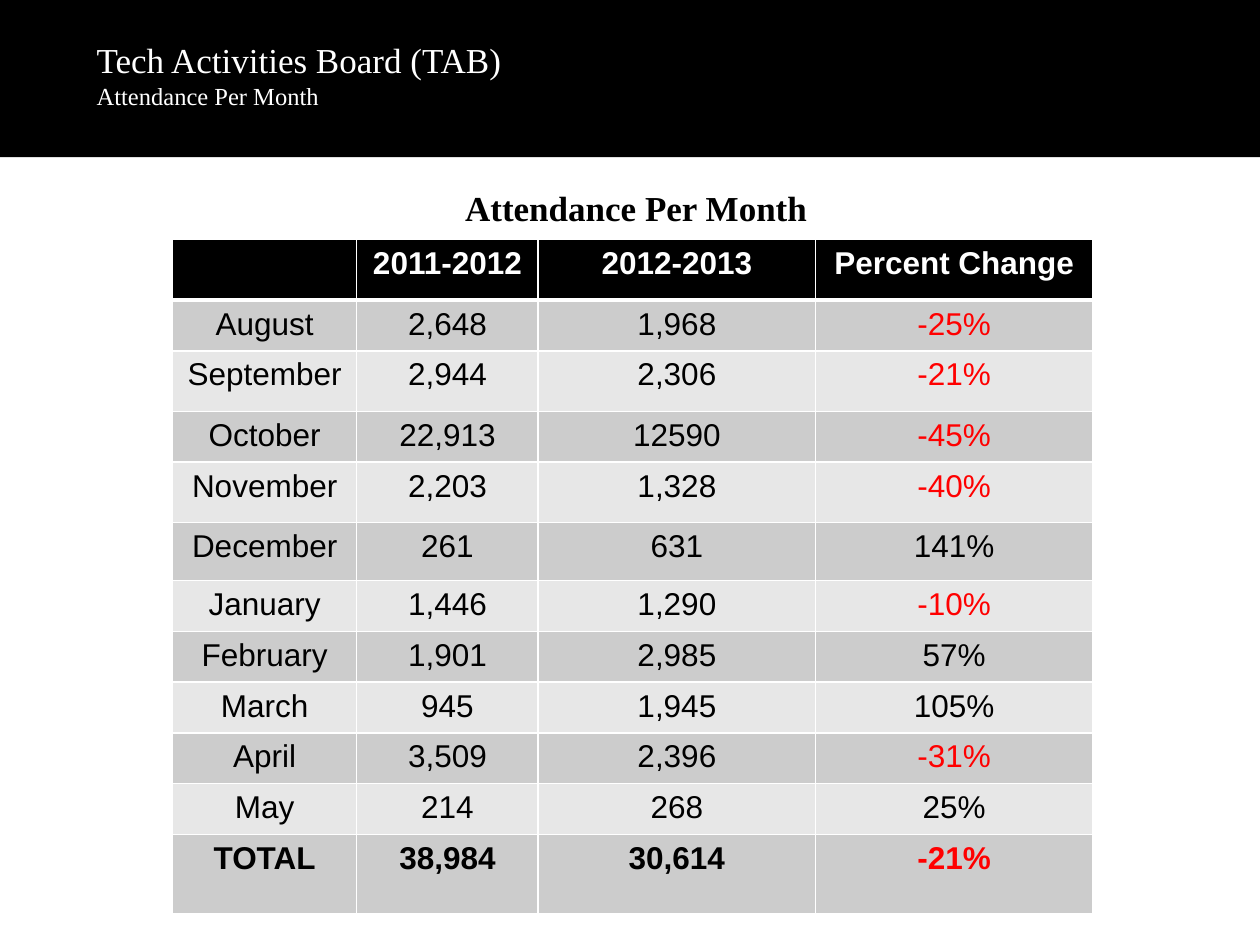
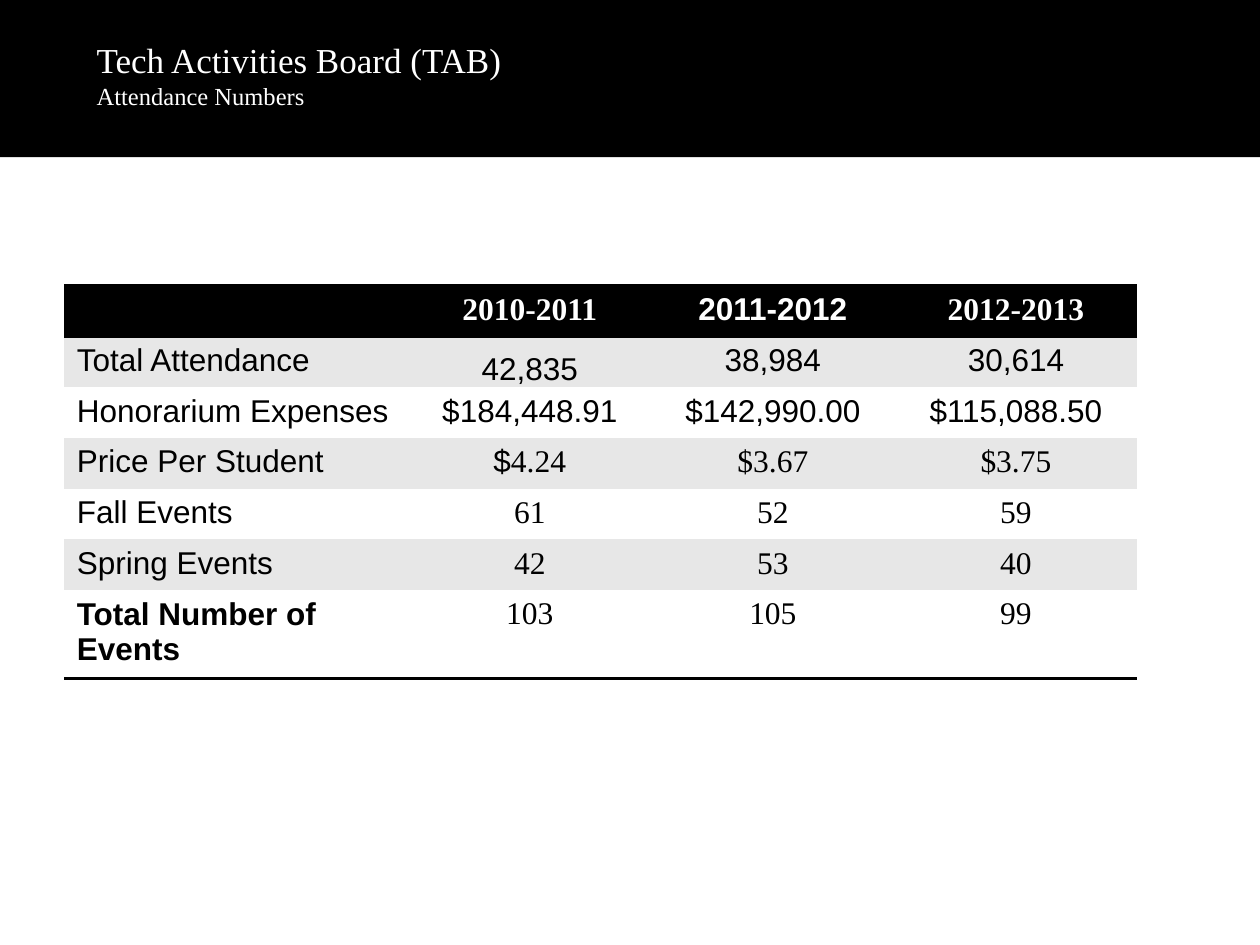
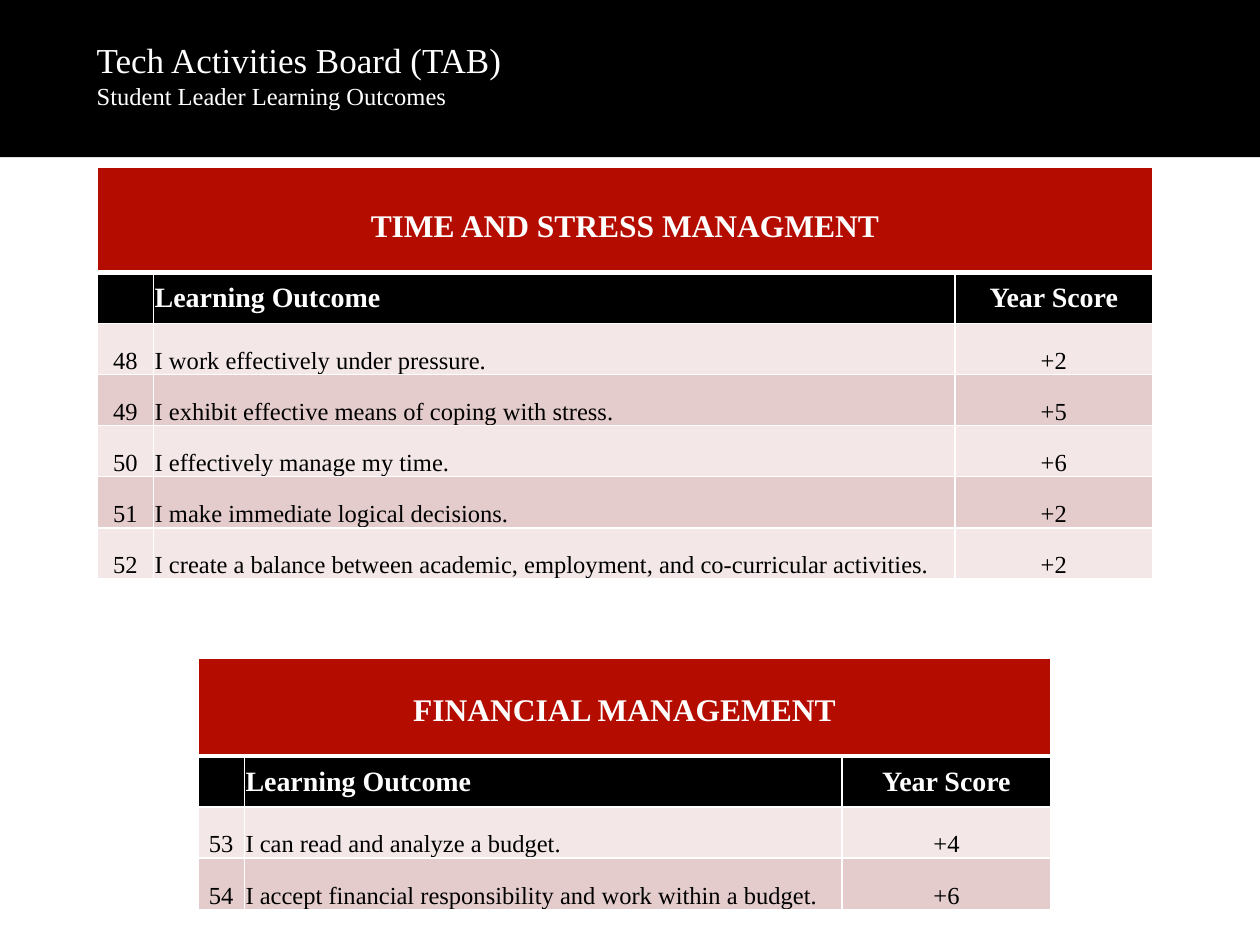
from dataclasses import dataclass, replace
from typing import Callable, Optional

import pptx
import pptx.dml.color
import pptx.enum.shapes
import pptx.enum.text
import pptx.oxml.ns
import pptx.slide
import pptx.table
import pptx.text.text
import pptx.util
from lxml import etree

Cm = pptx.util.Cm
Align = pptx.enum.text.PP_ALIGN
Anchor = pptx.enum.text.MSO_ANCHOR

BLACK, WHITE, RED, BRICK = "000000", "FFFFFF", "FF0000", "B50C00"
GREY, PALE = "CCCCCC", "E7E7E7"
ROSE, BLUSH = "E5CCCC", "F3E7E7"
SANS, SERIF = "Arial", "Times New Roman"

# Cell margins in cm: left, top, right, bottom
ROOMY = (0.25, 0.13, 0.25, 0.13)
TIGHT = (0.02, 0.02, 0.02, 0)
LIFTED = (0.02, 0.02, 0.02, 0.57)

Edge = Optional[tuple[str, float]]
THIN, THICK, DARK = (WHITE, 1), (WHITE, 3), (BLACK, 2)


@dataclass(frozen=True)
class Style:
    fill: str
    font: str = SANS
    size: int = 18
    ink: str = BLACK
    bold: bool = False
    align: Align = Align.CENTER
    anchor: Anchor = Anchor.TOP
    pad: tuple[float, ...] = ROOMY
    side: Edge = THIN
    top: Edge = THIN
    base: Edge = THIN


@dataclass(frozen=True)
class Grid:
    left: float
    top: float
    widths: list[float]
    heights: list[float]
    rows: list[list[str]]
    style: Callable[[int, int, str], Style]


def tint(code: str) -> pptx.dml.color.RGBColor:
    return pptx.dml.color.RGBColor.from_string(code)


def set_font(para: pptx.text.text._Paragraph, font: str, size: int, ink: str,
             bold: bool = False) -> None:
    for run in para.runs:
        run.font.name = font
        run.font.size = pptx.util.Pt(size)
        run.font.bold = bold
        run.font.color.rgb = tint(ink)


def add_edge(cell: pptx.table._Cell, tag: str, edge: Edge) -> None:
    """Append one border; call before the fill is set, in the order L, R, T, B."""
    qn = pptx.oxml.ns.qn
    line = etree.SubElement(cell._tc.get_or_add_tcPr(), qn(f"a:{tag}"))
    if edge is None:
        etree.SubElement(line, qn("a:noFill"))
        return
    code, width = edge
    line.set("w", str(pptx.util.Pt(width)))
    fill = etree.SubElement(line, qn("a:solidFill"))
    etree.SubElement(fill, qn("a:srgbClr")).set("val", code)


def draw_cell(cell: pptx.table._Cell, text: str, style: Style) -> None:
    edges = (style.side, style.side, style.top, style.base)
    for tag, edge in zip(("lnL", "lnR", "lnT", "lnB"), edges):
        add_edge(cell, tag, edge)
    cell.fill.solid()
    cell.fill.fore_color.rgb = tint(style.fill)
    (cell.margin_left, cell.margin_top,
     cell.margin_right, cell.margin_bottom) = map(Cm, style.pad)
    cell.vertical_anchor = style.anchor
    if text:
        cell.text_frame.text = text
        para = cell.text_frame.paragraphs[0]
        para.alignment = style.align
        set_font(para, style.font, style.size, style.ink, style.bold)


def draw_grid(slide: pptx.slide.Slide, grid: Grid) -> pptx.table.Table:
    frame = slide.shapes.add_table(
        len(grid.heights), len(grid.widths), Cm(grid.left), Cm(grid.top),
        Cm(sum(grid.widths)), Cm(sum(grid.heights)))
    table = frame.table
    table.first_row = table.horz_banding = False
    for col, width in zip(table.columns, grid.widths):
        col.width = Cm(width)
    for row, height in zip(table.rows, grid.heights):
        row.height = Cm(height)
    for r, texts in enumerate(grid.rows):
        for c, text in enumerate(texts):
            draw_cell(table.cell(r, c), text, grid.style(r, c, text))
    return table


def add_text(slide: pptx.slide.Slide, box: tuple[float, ...],
             text: str) -> pptx.text.text.TextFrame:
    frame = slide.shapes.add_textbox(*map(Cm, box)).text_frame
    frame.word_wrap = True
    frame.text = text
    return frame


def add_page(deck: pptx.presentation.Presentation, topic: str) -> pptx.slide.Slide:
    """Add a slide with the black band and its two-line title."""
    slide = deck.slides.add_slide(deck.slide_layouts[6])
    band = slide.shapes.add_shape(
        pptx.enum.shapes.MSO_SHAPE.RECTANGLE, 0, 0, deck.slide_width, Cm(3.17))
    band.shadow.inherit = False
    band.fill.solid()
    band.fill.fore_color.rgb = tint(BLACK)
    band.line.fill.background()
    title = add_text(slide, (1.7, -0.08, 20.88, 3.17),
                     f"Tech Activities Board (TAB)\n{topic}")
    title.vertical_anchor = Anchor.MIDDLE
    for para, size in zip(title.paragraphs, (20, 14)):
        set_font(para, SERIF, size, WHITE)
    return slide


def month_style(r: int, c: int, text: str) -> Style:
    if r == 0:
        return Style(BLACK, ink=WHITE, bold=True, base=THICK)
    return Style(GREY if r % 2 else PALE, bold=r == len(MONTHS) - 1,
                 ink=RED if text.startswith("-") else BLACK,
                 top=THICK if r == 1 else THIN)


def year_style(r: int, c: int, text: str) -> Style:
    if r == 0:
        return Style(BLACK, SANS if c == 2 else SERIF, ink=WHITE, bold=True,
                     side=None, top=DARK, base=DARK)
    last = r == len(YEARS) - 1
    style = Style(PALE if r % 2 else WHITE, SERIF if c and r > 2 else SANS,
                  bold=last and c == 0, align=Align.CENTER if c else Align.LEFT,
                  side=None, top=DARK if r == 1 else None,
                  base=DARK if last else None)
    if (r, c) == (1, 1):
        style = replace(style, anchor=Anchor.BOTTOM, pad=TIGHT)
    return style


def score_style(r: int, c: int, text: str) -> Style:
    if r == 0:
        return Style(BRICK, SERIF, ink=WHITE, bold=True, anchor=Anchor.BOTTOM,
                     pad=LIFTED, base=THICK)
    align = Align.LEFT if c == 1 else Align.CENTER
    if r == 1:
        return Style(BLACK, SERIF, 16, WHITE, True, align, Anchor.MIDDLE, TIGHT,
                     top=THICK)
    return Style(ROSE if r % 2 else BLUSH, SERIF, 14, align=align,
                 anchor=Anchor.BOTTOM, pad=TIGHT)


def draw_score(slide: pptx.slide.Slide, left: float, top: float,
               widths: list[float], head: float, name: str, first: int,
               scores: list[tuple[str, str]]) -> None:
    """Draw a banner, a heading row and outcomes numbered from first."""
    rows = [[name, "", ""], ["", "Learning Outcome", "Year Score"]]
    rows += [[str(n), *pair] for n, pair in enumerate(scores, first)]
    heights = [head] + [1.03] * (len(rows) - 1)
    table = draw_grid(slide, Grid(left, top, widths, heights, rows, score_style))
    table.cell(0, 0).merge(table.cell(0, 2))


MONTHS = [
    ["", "2011-2012", "2012-2013", "Percent Change"],
    ["August", "2,648", "1,968", "-25%"],
    ["September", "2,944", "2,306", "-21%"],
    ["October", "22,913", "12590", "-45%"],
    ["November", "2,203", "1,328", "-40%"],
    ["December", "261", "631", "141%"],
    ["January", "1,446", "1,290", "-10%"],
    ["February", "1,901", "2,985", "57%"],
    ["March", "945", "1,945", "105%"],
    ["April", "3,509", "2,396", "-31%"],
    ["May", "214", "268", "25%"],
    ["TOTAL", "38,984", "30,614", "-21%"],
]
YEARS = [
    ["", "2010-2011", "2011-2012", "2012-2013"],
    ["Total Attendance", "42,835", "38,984", "30,614"],
    ["Honorarium Expenses", "$184,448.91", "$142,990.00", "$115,088.50"],
    ["Price Per Student", "$4.24", "$3.67", "$3.75"],
    ["Fall Events", "61", "52", "59"],
    ["Spring Events", "42", "53", "40"],
    ["Total Number of Events", "103", "105", "99"],
]
STRESS = [
    ("I work effectively under pressure.", "+2"),
    ("I exhibit effective means of coping with stress.", "+5"),
    ("I effectively manage my time.", "+6"),
    ("I make immediate logical decisions.", "+2"),
    ("I create a balance between academic, employment, and "
     "co-curricular activities.", "+2"),
]
MONEY = [
    ("I can read and analyze a budget.", "+4"),
    ("I accept financial responsibility and work within a budget.", "+6"),
]


def main() -> None:
    deck = pptx.Presentation()
    deck.slide_width, deck.slide_height = Cm(25.4), Cm(19.05)

    slide = add_page(deck, "Attendance Per Month")
    heights = [1.22, 1.02, 1.22, 1.02, 1.22, 1.17] + [1.02] * 5 + [1.6]
    draw_grid(slide, Grid(3.48, 4.83, [3.71, 3.66, 5.59, 5.59], heights,
                          MONTHS, month_style))
    para = add_text(slide, (7.11, 3.63, 11.43, 1.12),
                    "Attendance Per Month").paragraphs[0]
    para.alignment = Align.CENTER
    set_font(para, SERIF, 20, BLACK, True)

    slide = add_page(deck, "Attendance Numbers")
    table = draw_grid(slide, Grid(1.3, 5.76, [6.93] + [4.9] * 3,
                                  [1.02] * 6 + [1.57], YEARS, year_style))
    price = table.cell(3, 1).text_frame.paragraphs[0]
    price.runs[0].text = "$"
    price.add_run().text = "4.24"
    set_font(price, SERIF, 18, BLACK)
    price.runs[0].font.name = SANS

    slide = add_page(deck, "Student Leader Learning Outcomes")
    draw_score(slide, 1.96, 3.38, [1.14, 16.15, 3.99], 2.11,
               "TIME AND STRESS MANAGMENT", 48, STRESS)
    draw_score(slide, 3.99, 13.26, [0.94, 12.04, 4.22], 1.98,
               "FINANCIAL MANAGEMENT", 53, MONEY)

    deck.save("out.pptx")


if __name__ == "__main__":
    main()
